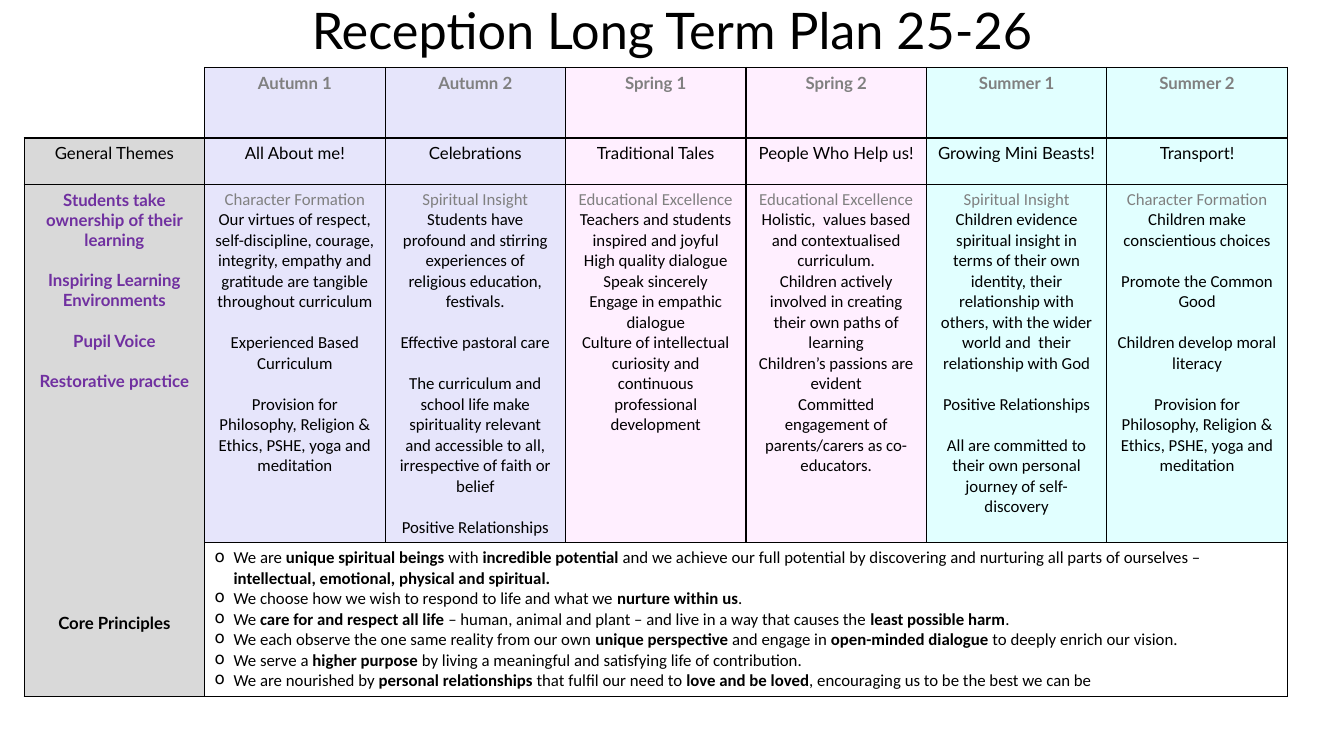
"""Build the Reception long term plan slide: a termly table with core principles."""
from lxml.etree import SubElement
from pptx import Presentation
from pptx.dml.color import RGBColor
from pptx.enum.text import MSO_ANCHOR, PP_ALIGN
from pptx.oxml.ns import qn
from pptx.util import Pt


class Theme:
    heading_font = "Lato"
    body_font = "Calibri"
    title_size = Pt(36)
    table_size = Pt(12)
    ink = RGBColor.from_string("000000")
    muted = RGBColor.from_string("808080")
    accent = RGBColor.from_string("7030A0")
    white = RGBColor.from_string("FFFFFF")
    label = RGBColor.from_string("D9D9D9")
    autumn = RGBColor.from_string("E6E5FB")
    spring = RGBColor.from_string("FFEFFF")
    summer = RGBColor.from_string("E1FFFF")


def write(frame, position, text, color, font=Theme.heading_font, size=Theme.table_size, bold=False, gap=0):
    """Write one centred paragraph, adding it after the first."""
    paragraph = frame.add_paragraph() if position else frame.paragraphs[0]
    paragraph.text = text
    paragraph.alignment = PP_ALIGN.CENTER
    if gap:
        paragraph.space_before = Pt(gap)
    paragraph.font.name = font
    paragraph.font.size = size
    paragraph.font.bold = bold
    paragraph.font.color.rgb = color
    return paragraph


def style_cell(cell, color, open_sides=()):
    """Fill a cell and rule its sides, leaving the open ones bare."""
    properties = cell._tc.get_or_add_tcPr()
    for side in "LRTB":
        line = SubElement(properties, qn(f"a:ln{side}"), w=str(Pt(1)))
        if side in open_sides:
            SubElement(line, qn("a:noFill"))
        else:
            ink = SubElement(line, qn("a:solidFill"))
            SubElement(ink, qn("a:srgbClr"), val=str(Theme.ink))
    cell.fill.solid()
    cell.fill.fore_color.rgb = color


provision = "Provision for Philosophy, Religion & Ethics, PSHE, yoga and meditation"
terms = [
    ("Autumn 1", "All About me!", Theme.autumn, [
        ["Character Formation",
         "Our virtues of respect, self-discipline, courage, integrity, empathy and gratitude "
         "are tangible throughout curriculum"],
        ["Experienced Based Curriculum"],
        [provision]]),
    ("Autumn 2", "Celebrations", Theme.autumn, [
        ["Spiritual Insight",
         "Students have profound and stirring experiences of religious education, festivals."],
        ["Effective pastoral care"],
        ["The curriculum and school life make spirituality relevant and accessible to all, "
         "irrespective of faith or belief"],
        ["Positive Relationships"]]),
    ("Spring 1", "Traditional Tales", Theme.spring, [
        ["Educational Excellence",
         "Teachers and students inspired and joyful",
         "High quality dialogue",
         "Speak sincerely",
         "Engage in empathic dialogue",
         "Culture of intellectual curiosity and continuous professional development"]]),
    ("Spring 2", "People Who Help us!", Theme.spring, [
        ["Educational Excellence",
         "Holistic,  values based and contextualised curriculum.",
         "Children actively involved in creating their own paths of learning",
         "Children’s passions are evident",
         "Committed engagement of parents/carers as co-educators."]]),
    ("Summer 1", "Growing Mini Beasts!", Theme.summer, [
        ["Spiritual Insight",
         "Children evidence spiritual insight in terms of their own identity, their relationship "
         "with others, with the wider world and  their relationship with God"],
        ["Positive Relationships"],
        ["All are committed to their own personal journey of self-discovery"]]),
    ("Summer 2", "Transport!", Theme.summer, [
        ["Character Formation", "Children make conscientious choices"],
        ["Promote the Common Good"],
        ["Children develop moral literacy"],
        [provision]]),
]
priorities = ["Students take ownership of their learning", "Inspiring Learning Environments",
              "Pupil Voice", "Restorative practice"]
principles = [
    "We are **unique spiritual beings **with **incredible potential **and we achieve our full potential "
    "by discovering and nurturing all parts of ourselves – **intellectual, emotional, physical and spiritual.",
    "We choose how we wish to respond to life and what we **nurture within us**.",
    "We **care for and respect all life **– human, animal and plant – and live in a way that causes the "
    "**least possible harm**.",
    "We each observe the one same reality from our own **unique perspective **and engage in "
    "**open-minded dialogue **to deeply enrich our vision.",
    "We serve a **higher purpose **by living a meaningful and satisfying life of contribution.",
    "We are nourished by **personal relationships **that fulfil our need to **love and be loved**, "
    "encouraging us to be the best we can be",
]

deck = Presentation()
deck.slide_width, deck.slide_height = Pt(960), Pt(540)
slide = deck.slides.add_slide(deck.slide_layouts[6])

row_heights = [50.4, 33.1, 256, 110]
column_width = 128.9
plan = slide.shapes.add_table(4, 7, Pt(17.3), Pt(48.2), Pt(7 * column_width), Pt(sum(row_heights))).table
plan.first_row = plan.horz_banding = False
for column in plan.columns:
    column.width = Pt(column_width)
for row, height in zip(plan.rows, row_heights):
    row.height = Pt(height)

style_cell(plan.cell(0, 0), Theme.white, open_sides="LT")
for row_index in (1, 2, 3):
    style_cell(plan.cell(row_index, 0), Theme.label)
plan.cell(2, 0).merge(plan.cell(3, 0))
write(plan.cell(1, 0).text_frame, 0, "General Themes", Theme.ink)

heading_line, body_line = 14.4, 14.65
priority_frame = plan.cell(2, 0).text_frame
for position, priority in enumerate(priorities):
    write(priority_frame, position, priority, Theme.accent, bold=True, gap=heading_line if position else 0)
write(priority_frame, len(priorities), "Core Principles", Theme.ink, bold=True, gap=11 * heading_line)

for column_index, (term, topic, tint, blocks) in enumerate(terms, start=1):
    for row_index in range(3):
        style_cell(plan.cell(row_index, column_index), tint)
    style_cell(plan.cell(3, column_index), Theme.white)
    write(plan.cell(0, column_index).text_frame, 0, term, Theme.muted, bold=True)
    write(plan.cell(1, column_index).text_frame, 0, topic, Theme.ink)
    focus_frame = plan.cell(2, column_index).text_frame
    position = 0
    for block in blocks:
        for block_line, statement in enumerate(block):
            write(focus_frame, position, statement, Theme.ink if position else Theme.muted,
                  font=Theme.body_font, gap=body_line if position and not block_line else 0)
            position += 1

plan.cell(3, 1).merge(plan.cell(3, 6))
principle_frame = plan.cell(3, 1).text_frame
for position, principle in enumerate(principles):
    paragraph = principle_frame.add_paragraph() if position else principle_frame.paragraphs[0]
    indents = paragraph._p.get_or_add_pPr()
    indents.set("marL", str(Pt(13.5)))
    indents.set("indent", str(Pt(-13.5)))
    SubElement(indents, qn("a:buChar"), char="o")
    paragraph.font.name = Theme.body_font
    paragraph.font.size = Theme.table_size
    paragraph.font.color.rgb = Theme.ink
    for part, words in enumerate(principle.split("**")):
        run = paragraph.add_run()
        run.text = words
        run.font.bold = part % 2 == 1

title_frame = slide.shapes.add_textbox(Pt(66), Pt(-57.6), Pt(828), Pt(104.4)).text_frame
title_frame.word_wrap = True
title_frame.vertical_anchor = MSO_ANCHOR.BOTTOM
title = write(title_frame, 0, "Reception Long Term Plan 25-26", Theme.ink, size=Theme.title_size)
title.line_spacing = 0.9

deck.save("out.pptx")
